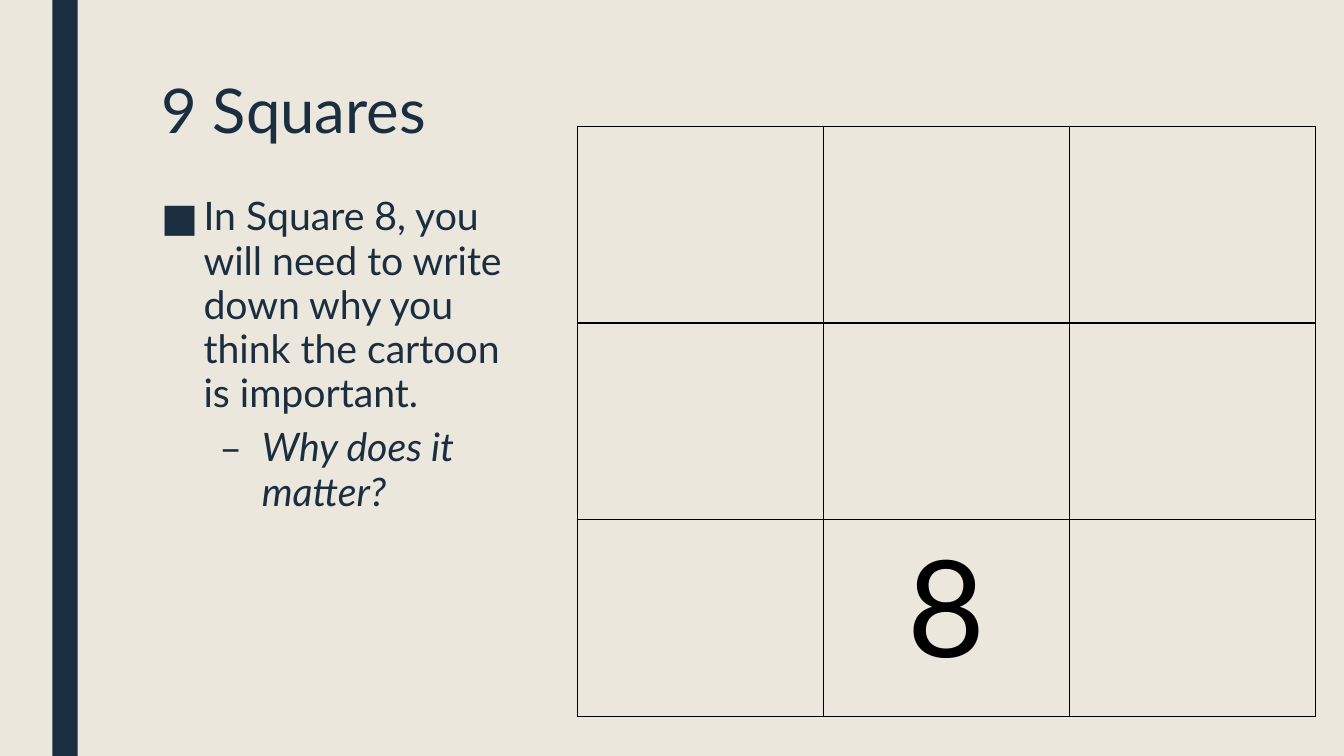
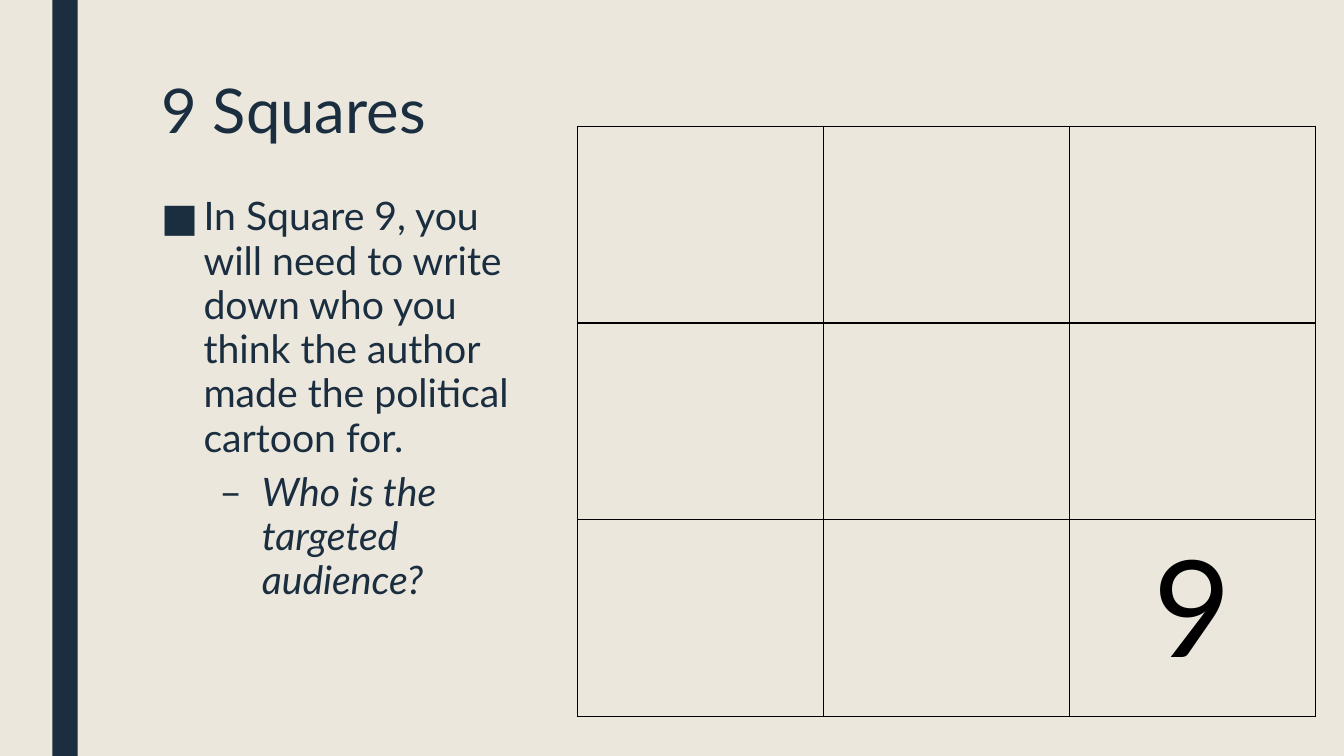
from dataclasses import dataclass

from lxml import etree
from pptx import Presentation
from pptx import util as u
from pptx.dml.color import RGBColor
from pptx.enum import shapes, text
from pptx.oxml.ns import qn


@dataclass(frozen=True)
class Theme:
    paper: RGBColor = RGBColor.from_string("EBE7DD")
    navy: RGBColor = RGBColor.from_string("1A2E40")
    black: RGBColor = RGBColor.from_string("000000")
    font: str = "Lato"
    title_size: int = 44
    body_size: int = 28
    number_size: int = 96
    border: int = 1


T = Theme()

# Boxes: left, top, width, height in centimetres
BAND = (1.32, 0, 0.64, 19.05)
TITLE = (3.81, 1.9, 26.67, 2.57)
TASK = (3.81, 4.8, 9.83, 12.78)
GRID = (14.55, 3.18, 18.6, 14.88)
GRID_SIZE = 3

TASKS = [
    (8, "In Square 8, you will need to write down why you think the cartoon is important.",
     "Why does it matter?"),
    (9, "In Square 9, you will need to write down who you think the author made "
        "the political cartoon for.",
     "Who is the targeted audience?"),
]


def cm(box):
    return [u.Cm(v) for v in box]


def add_run(p, content, size, color, italic=None):
    r = p.add_run()
    r.text = content
    r.font.name = T.font
    r.font.size = u.Pt(size)
    r.font.color.rgb = color
    r.font.italic = italic


def set_bullet(p, char, indent):
    """Hang a bullet so that its text starts at indent (cm)."""
    pPr = p._p.get_or_add_pPr()
    pPr.set("marL", str(u.Cm(indent)))
    pPr.set("indent", str(u.Cm(-1.07)))
    etree.SubElement(pPr, qn("a:buFont"), typeface=T.font)
    etree.SubElement(pPr, qn("a:buChar"), char=char)


def set_borders(cell):
    tcPr = cell._tc.get_or_add_tcPr()
    for i, side in enumerate(("lnL", "lnR", "lnT", "lnB")):
        ln = etree.Element(qn(f"a:{side}"), w=str(u.Pt(T.border)))
        fill = etree.SubElement(ln, qn("a:solidFill"))
        etree.SubElement(fill, qn("a:srgbClr"), val=str(T.black))
        tcPr.insert(i, ln)


def add_band(s, box):
    sp = s.shapes.add_shape(shapes.MSO_SHAPE.RECTANGLE, *cm(box))
    sp.shadow.inherit = False
    sp.fill.solid()
    sp.fill.fore_color.rgb = T.navy
    sp.line.fill.background()


def place_title(s, box, title):
    sp = s.shapes.title
    sp.left, sp.top, sp.width, sp.height = cm(box)
    tf = sp.text_frame
    tf.auto_size = text.MSO_AUTO_SIZE.NONE
    tf.vertical_anchor = text.MSO_ANCHOR.TOP
    p = tf.paragraphs[0]
    p.alignment = text.PP_ALIGN.LEFT
    p.line_spacing = 0.89
    add_run(p, title, T.title_size, T.navy)


def add_task(s, box, task, question):
    tf = s.shapes.add_textbox(*cm(box)).text_frame
    tf.word_wrap = True
    items = [(task, "■", 1.07, 10, None), (question, "–", 2.54, 5, True)]
    for level, (content, char, indent, before, italic) in enumerate(items):
        p = tf.add_paragraph() if level else tf.paragraphs[0]
        p.level = level
        p.line_spacing = 0.94
        p.space_before = u.Pt(before)
        p.space_after = u.Pt(2)
        set_bullet(p, char, indent)
        add_run(p, content, T.body_size, T.navy, italic)


def add_grid(s, box, number):
    """Draw the squares, numbered row by row, and label only one of them."""
    table = s.shapes.add_table(GRID_SIZE, GRID_SIZE, *cm(box)).table
    table.first_row = table.horz_banding = False
    for cell in table.iter_cells():
        cell.fill.background()
        set_borders(cell)
    p = table.cell(*divmod(number - 1, GRID_SIZE)).text_frame.paragraphs[0]
    p.alignment = text.PP_ALIGN.CENTER
    add_run(p, str(number), T.number_size, T.black)


def add_square_slide(prs, number, task, question):
    s = prs.slides.add_slide(prs.slide_layouts.get_by_name("Title Only"))
    add_band(s, BAND)
    place_title(s, TITLE, "9 Squares")
    add_task(s, TASK, task, question)
    add_grid(s, GRID, number)


def main():
    prs = Presentation()
    prs.slide_width, prs.slide_height = u.Cm(33.87), u.Cm(19.05)
    fill = prs.slide_master.background.fill
    fill.solid()
    fill.fore_color.rgb = T.paper
    for number, task, question in TASKS:
        add_square_slide(prs, number, task, question)
    prs.save("out.pptx")


if __name__ == "__main__":
    main()
